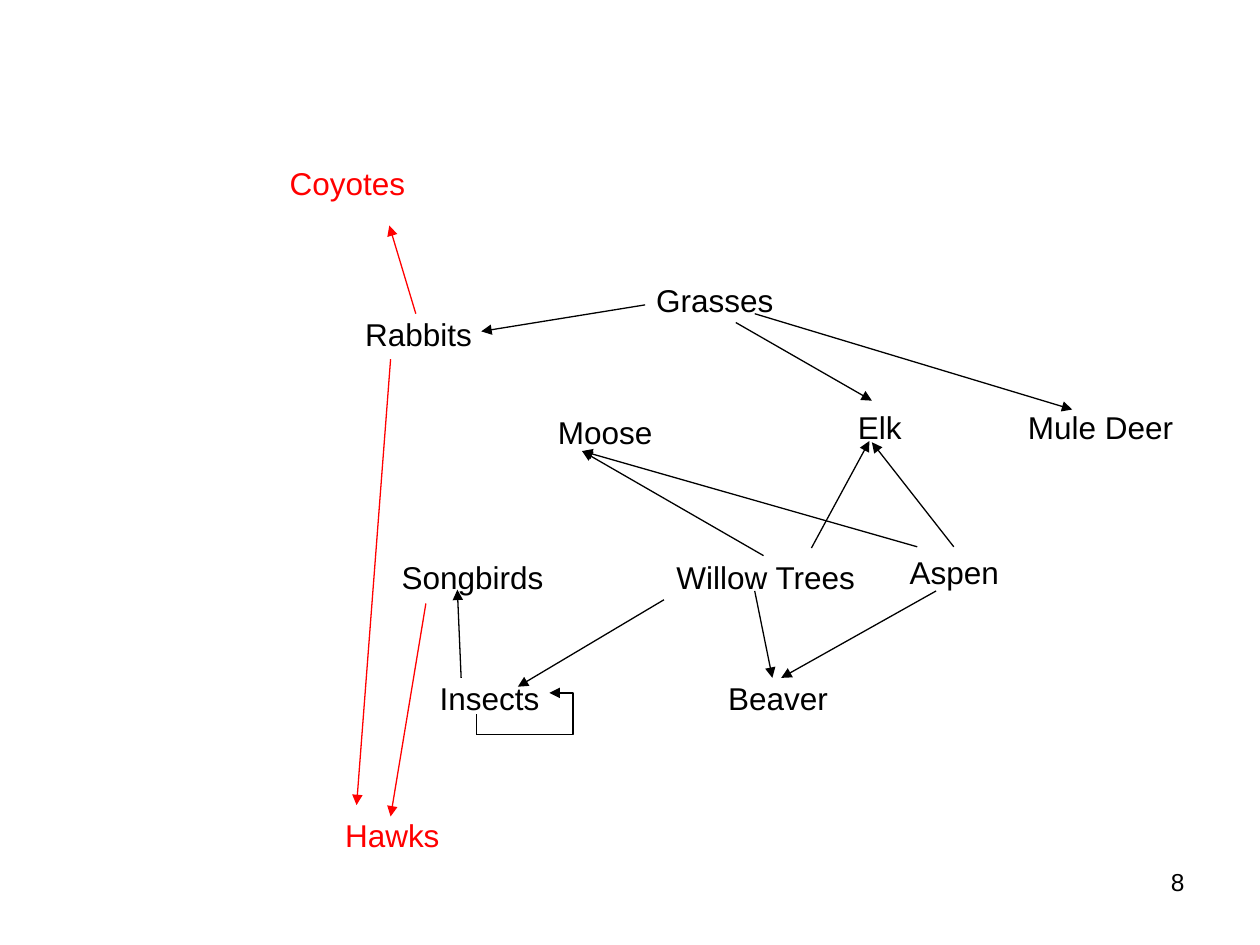
from lxml.etree import SubElement
from pptx import Presentation
from pptx.dml.color import RGBColor
from pptx.enum.shapes import MSO_CONNECTOR as Connector
from pptx.enum.text import MSO_AUTO_SIZE as AutoSize, PP_ALIGN as Align
from pptx.oxml.ns import qn
from pptx.util import Inches, Pt

COLORS = {"producer": "000000", "predator": "FF0000", "page": "FFFFFF"}

SPECIES = [
    ("Moose", 4.33, 3.23, 0.95, "producer"),
    ("Insects", 3.39, 5.34, 0.99, "producer"),
    ("Hawks", 2.64, 6.43, 0.95, "predator"),
    ("Elk", 6.71, 3.19, 0.55, "producer"),
    ("Songbirds", 3.09, 4.38, 1.33, "producer"),
    ("Willow Trees", 5.27, 4.38, 1.63, "producer"),
    ("Mule Deer", 8.06, 3.19, 1.36, "producer"),
    ("Aspen", 7.12, 4.34, 0.91, "producer"),
    ("Beaver", 5.68, 5.34, 0.99, "producer"),
    ("Grasses", 5.11, 2.18, 1.13, "producer"),
    ("Rabbits", 2.8, 2.45, 1.05, "producer"),
]

FEEDING_ARROWS = [
    ((6.06, 4.41), (4.62, 3.58), "producer"),
    ((6.44, 4.35), (6.9, 3.5), "producer"),
    ((7.28, 4.34), (4.62, 3.58), "producer"),
    ((7.57, 4.34), (6.92, 3.51), "producer"),
    ((7.43, 4.69), (6.2, 5.38), "producer"),
    ((5.99, 4.69), (6.13, 5.38), "producer"),
    ((5.27, 4.76), (4.11, 5.45), "producer"),
    ((3.66, 5.38), (3.63, 4.68), "producer"),
    ((5.12, 2.42), (3.82, 2.63), "producer"),
    ((5.84, 2.56), (6.92, 3.18), "producer"),
    ((5.99, 2.49), (8.51, 3.25), "producer"),
    ((3.38, 4.79), (3.1, 6.48), "predator"),
    ((3.1, 2.85), (2.83, 6.39), "predator"),
    ((3.3, 2.49), (3.09, 1.79), "predator"),
]


def add_label(slide, text, left, top, width, color, height=0.4, size=18,
              wrap=False, grow=True, align=None):
    box = slide.shapes.add_textbox(
        Inches(left), Inches(top), Inches(width), Inches(height))
    frame = box.text_frame
    frame.word_wrap = wrap
    frame.auto_size = AutoSize.SHAPE_TO_FIT_TEXT if grow else AutoSize.NONE
    paragraph = frame.paragraphs[0]
    paragraph.alignment = align
    run = paragraph.add_run()
    run.text = text
    run.font.name = "Arial"
    run.font.size = Pt(size)
    run.font.color.rgb = RGBColor.from_string(COLORS[color])


def add_line(slide, start, end, color, kind=Connector.STRAIGHT, arrow=True):
    line = slide.shapes.add_connector(
        kind, *(Inches(value) for value in (*start, *end)))
    line.line.color.rgb = RGBColor.from_string(COLORS[color])
    line.line.width = Pt(0.75)
    if arrow:
        SubElement(line.line._get_or_add_ln(), qn("a:tailEnd"), type="triangle")
    SubElement(line._element.spPr, qn("a:effectLst"))
    return line


def add_self_loop(slide, start, end, bend):
    loop = add_line(slide, start, end, "producer", Connector.ELBOW)
    geometry = loop._element.spPr.find(qn("a:prstGeom"))
    adjustments = geometry.find(qn("a:avLst"))
    if adjustments is None:
        adjustments = SubElement(geometry, qn("a:avLst"))
    SubElement(adjustments, qn("a:gd"), name="adj1", fmla=f"val {bend}")


def main():
    presentation = Presentation()
    presentation.slide_width = Inches(10)
    presentation.slide_height = Inches(7.5)
    slide = presentation.slides.add_slide(presentation.slide_layouts[6])
    background = slide.background.fill
    background.solid()
    background.fore_color.rgb = RGBColor.from_string(COLORS["page"])

    for start, end, color in FEEDING_ARROWS:
        add_line(slide, start, end, color)
    for name, left, top, width, color in SPECIES:
        add_label(slide, name, left, top, width, color)
    add_label(slide, "Coyotes", 2.2, 1.25, 2.2, "predator", wrap=True)

    add_self_loop(slide, (3.78, 5.83), (4.36, 5.5), 132400)
    add_line(slide, (3.78, 5.83), (3.78, 5.67), "producer", arrow=False)
    add_label(slide, "8", 7.17, 6.83, 2.33, "producer", height=0.52, size=14,
              wrap=True, grow=False, align=Align.RIGHT)
    presentation.save("out.pptx")


if __name__ == "__main__":
    main()
